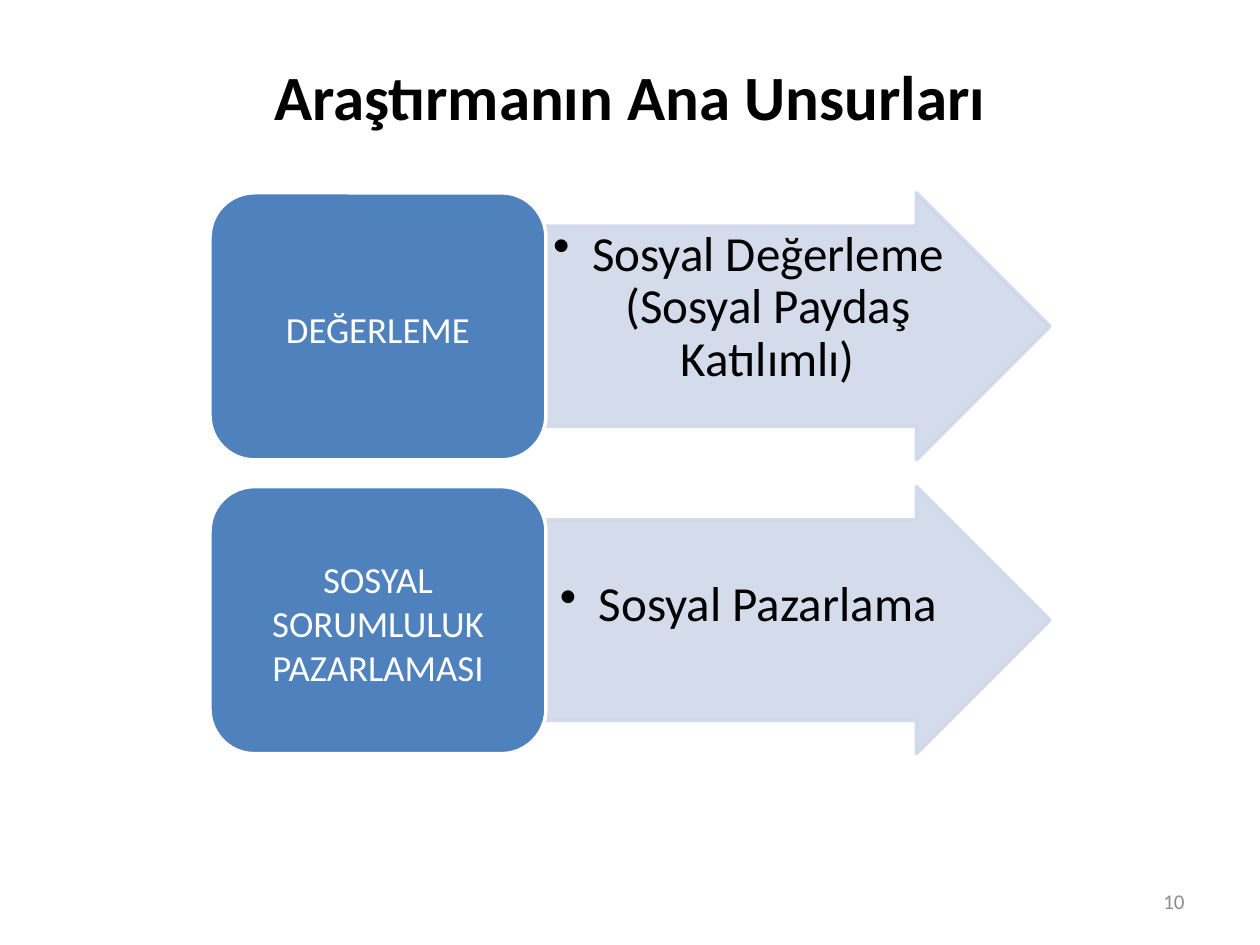
"""Build a slide with two labelled arrows for the main elements of the research."""
from lxml import etree
from pptx import Presentation
from pptx.dml.color import RGBColor
from pptx.enum.shapes import MSO_SHAPE
from pptx.enum.text import MSO_ANCHOR, PP_ALIGN
from pptx.oxml.ns import qn
from pptx.util import Inches, Pt

ARROW, ROUNDED = MSO_SHAPE.RIGHT_ARROW, MSO_SHAPE.ROUNDED_RECTANGLE
TOP, MIDDLE = MSO_ANCHOR.TOP, MSO_ANCHOR.MIDDLE
CENTER, RIGHT = PP_ALIGN.CENTER, PP_ALIGN.RIGHT

WIDTH, HEIGHT = 10, 7.5
LABEL_LEFT, LABEL_WIDTH = WIDTH / 6, WIDTH * 4 / 15
ARROW_LEFT, ARROW_WIDTH = LABEL_LEFT + LABEL_WIDTH, WIDTH * 0.4
FIRST_ROW, ROW_HEIGHT = 1.53, 2.12
ROW_PITCH = ROW_HEIGHT * 1.1
LABEL_PAD = 0.1
BODY_INSET, BODY_WIDTH = ROW_HEIGHT / 8, 3.21
INDENT = Inches(0.31)

ROWS = [
    ("DEĞERLEME", "Sosyal Değerleme (Sosyal Paydaş Katılımlı)", 0.02),
    ("SOSYAL SORUMLULUK PAZARLAMASI", "Sosyal Pazarlama", 0.54),
]


def add_panel(page, kind, place, fill, line, opacity=100):
    """Add a preset shape with the given fill, outline and opacity."""
    panel = page.shapes.add_shape(kind, *map(Inches, place))
    panel.shadow.inherit = False
    panel.fill.solid()
    panel.fill.fore_color.rgb = RGBColor.from_string(fill)
    panel.line.color.rgb = RGBColor.from_string(line)
    panel.line.width = Pt(2)
    if opacity < 100:
        for color in panel.element.spPr.iter(qn("a:srgbClr")):
            etree.SubElement(color, qn("a:alpha"), val=str(opacity * 1000))
    return panel


def add_text(page, place, text, size, color, margins, anchor=MIDDLE, align=CENTER, bold=False):
    """Add a wrapped text box holding one paragraph and return the paragraph."""
    frame = page.shapes.add_textbox(*map(Inches, place)).text_frame
    left, top, right, bottom = map(Inches, margins)
    settings = {"word_wrap": True, "vertical_anchor": anchor, "margin_left": left,
                "margin_top": top, "margin_right": right, "margin_bottom": bottom}
    for name, value in settings.items():
        setattr(frame, name, value)
    para = frame.paragraphs[0]
    para.alignment = align
    span = para.add_run()
    span.text = text
    for name, value in {"name": "Calibri", "size": Pt(size), "bold": bold}.items():
        setattr(span.font, name, value)
    span.font.color.rgb = RGBColor.from_string(color)
    return para


deck = Presentation()
deck.slide_width, deck.slide_height = Inches(WIDTH), Inches(HEIGHT)
page = deck.slides.add_slide(deck.slide_layouts[6])

standard = (0.1, 0.05, 0.1, 0.05)
add_text(page, (WIDTH * 0.05, 0.13, WIDTH * 0.9, HEIGHT / 6),
         "Araştırmanın Ana Unsurları", 36, "000000", standard, bold=True)

for index, (label, body, body_top) in enumerate(ROWS):
    top = FIRST_ROW + index * ROW_PITCH
    arrow = add_panel(page, ARROW, (ARROW_LEFT, top, ARROW_WIDTH, ROW_HEIGHT),
                      "D0D8E8", "D0D8E8", opacity=90)
    arrow.adjustments[0], arrow.adjustments[1] = 0.75, 0.5
    para = add_text(page, (ARROW_LEFT, top + BODY_INSET, BODY_WIDTH, ROW_HEIGHT * 0.75),
                    body, 28, "000000", (0.02, body_top, 0.02, 0.02), anchor=TOP)
    para.line_spacing = 0.9
    properties = para._p.get_or_add_pPr()
    properties.set("marL", str(INDENT))
    properties.set("indent", str(-INDENT))
    etree.SubElement(properties, qn("a:buChar"), char="•")

    add_panel(page, ROUNDED, (LABEL_LEFT, top, LABEL_WIDTH, ROW_HEIGHT), "4F81BD", "FFFFFF")
    add_text(page, (LABEL_LEFT + LABEL_PAD, top + LABEL_PAD,
                    LABEL_WIDTH - 2 * LABEL_PAD, ROW_HEIGHT - 2 * LABEL_PAD),
             label, 21, "FFFFFF", (0.09, 0.08, 0.09, 0.04))

add_text(page, (7.17, 6.95, WIDTH * 0.95 - 7.17, 0.4), "10", 12, "8C8C8C", standard, align=RIGHT)

deck.save("out.pptx")
